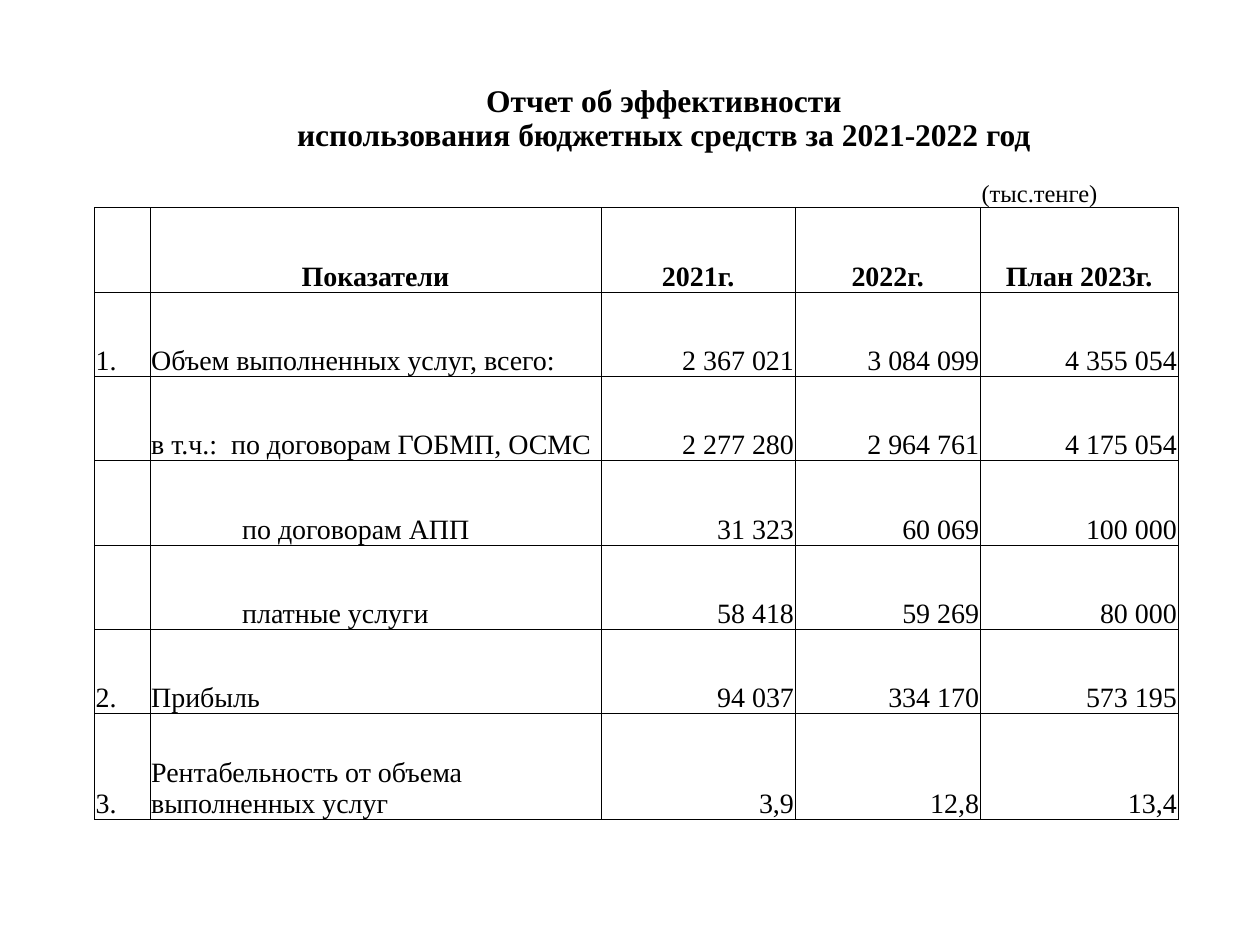
"""Build a slide with a table on how budget funds were used."""
from dataclasses import dataclass
from typing import NamedTuple

from lxml.etree import SubElement as Sub
from pptx import Presentation
from pptx.dml.color import RGBColor as Color
from pptx.enum.text import MSO_ANCHOR as Anchor, PP_ALIGN as Align
from pptx.oxml.ns import qn
from pptx.util import Pt


@dataclass(frozen=True)
class Theme:
    font: str = "Times New Roman"
    ink: str = "000000"
    title: float = 18
    note: float = 14
    body: float = 16
    line: float = 0.5
    inset: float = 0.72
    indent: float = 52


class Item(NamedTuple):
    label: str
    sums: tuple[str, ...]
    mark: str = ""
    indent: float = 0


THEME = Theme()
PLAIN = "{2D5ABB26-0587-4C30-8999-92F81FD0307C}"
COLS = (31.7, 257.8, 110.9, 105.8, 113)
ROWS = (48.2, 31, *[48.2] * 6, 60.5)
TITLE = ("Отчет об эффективности", "использования бюджетных средств за 2021-2022 год")
HEADS = ("Показатели", "2021г.", "2022г.", "План 2023г.")
ITEMS = (
    Item("Объем выполненных услуг, всего:", ("2 367 021", "3 084 099", "4 355 054"), "1."),
    Item("в т.ч.:  по договорам ГОБМП, ОСМС", ("2 277 280", "2 964 761", "4 175 054")),
    Item("по договорам АПП", ("31 323", "60 069", "100 000"), indent=THEME.indent),
    Item("платные услуги", ("58 418", "59 269", "80 000"), indent=THEME.indent),
    Item("Прибыль", ("94 037", "334 170", "573 195"), "2."),
    Item("Рентабельность от объема выполненных услуг", ("3,9", "12,8", "13,4"), "3."),
)


def add_lines(cell, sides: str) -> None:
    props = cell._tc.get_or_add_tcPr()
    for side in sides:
        line = Sub(props, qn(f"a:ln{side}"), w=str(Pt(THEME.line)))
        Sub(Sub(line, qn("a:solidFill")), qn("a:srgbClr"), val=THEME.ink)


def style_cell(cell, sides: str) -> None:
    add_lines(cell, sides)
    cell.fill.background()
    cell.vertical_anchor = Anchor.BOTTOM
    cell.margin_left = cell.margin_right = cell.margin_top = Pt(THEME.inset)
    cell.margin_bottom = Pt(0)


def write(cell, *texts: str, size: float = THEME.body, bold: bool = False,
          align: Align = Align.LEFT, indent: float = 0) -> None:
    frame = cell.text_frame
    for i, text in enumerate(texts):
        para = frame.add_paragraph() if i else frame.paragraphs[0]
        para.alignment = align
        if indent:
            para._p.get_or_add_pPr().set("marL", str(Pt(indent)))
        run = para.add_run()
        run.text = text
        run.font.name = THEME.font
        run.font.size = Pt(size)
        run.font.bold = bold
        run.font.color.rgb = Color.from_string(THEME.ink)


def add_grid(slide):
    frame = slide.shapes.add_table(len(ROWS), len(COLS), Pt(54), Pt(39.6),
                                   Pt(sum(COLS)), Pt(sum(ROWS)))
    table = frame.table
    table.first_row = table.horz_banding = False
    table._tbl.tblPr.find(qn("a:tableStyleId")).text = PLAIN
    for col, width in zip(table.columns, COLS):
        col.width = Pt(width)
    for i, (row, height) in enumerate(zip(table.rows, ROWS)):
        row.height = Pt(height)
        for cell in row.cells:
            style_cell(cell, ("", "B")[i] if i < 2 else "LRTB")
    return table


def fill_grid(table) -> None:
    table.cell(0, 1).merge(table.cell(0, 4))
    write(table.cell(0, 1), *TITLE, size=THEME.title, bold=True, align=Align.CENTER)
    write(table.cell(1, 4), "(тыс.тенге)", size=THEME.note)
    for col, head in enumerate(HEADS, 1):
        write(table.cell(2, col), head, bold=True, align=Align.CENTER)
    for row, item in enumerate(ITEMS, 3):
        if item.mark:
            write(table.cell(row, 0), item.mark)
        write(table.cell(row, 1), item.label, indent=item.indent)
        for col, value in enumerate(item.sums, 2):
            write(table.cell(row, col), value, align=Align.RIGHT)


def main() -> None:
    deck = Presentation()
    deck.slide_width, deck.slide_height = Pt(720), Pt(540)
    slide = deck.slides.add_slide(deck.slide_layouts[6])
    fill_grid(add_grid(slide))
    deck.save("out.pptx")


if __name__ == "__main__":
    main()
